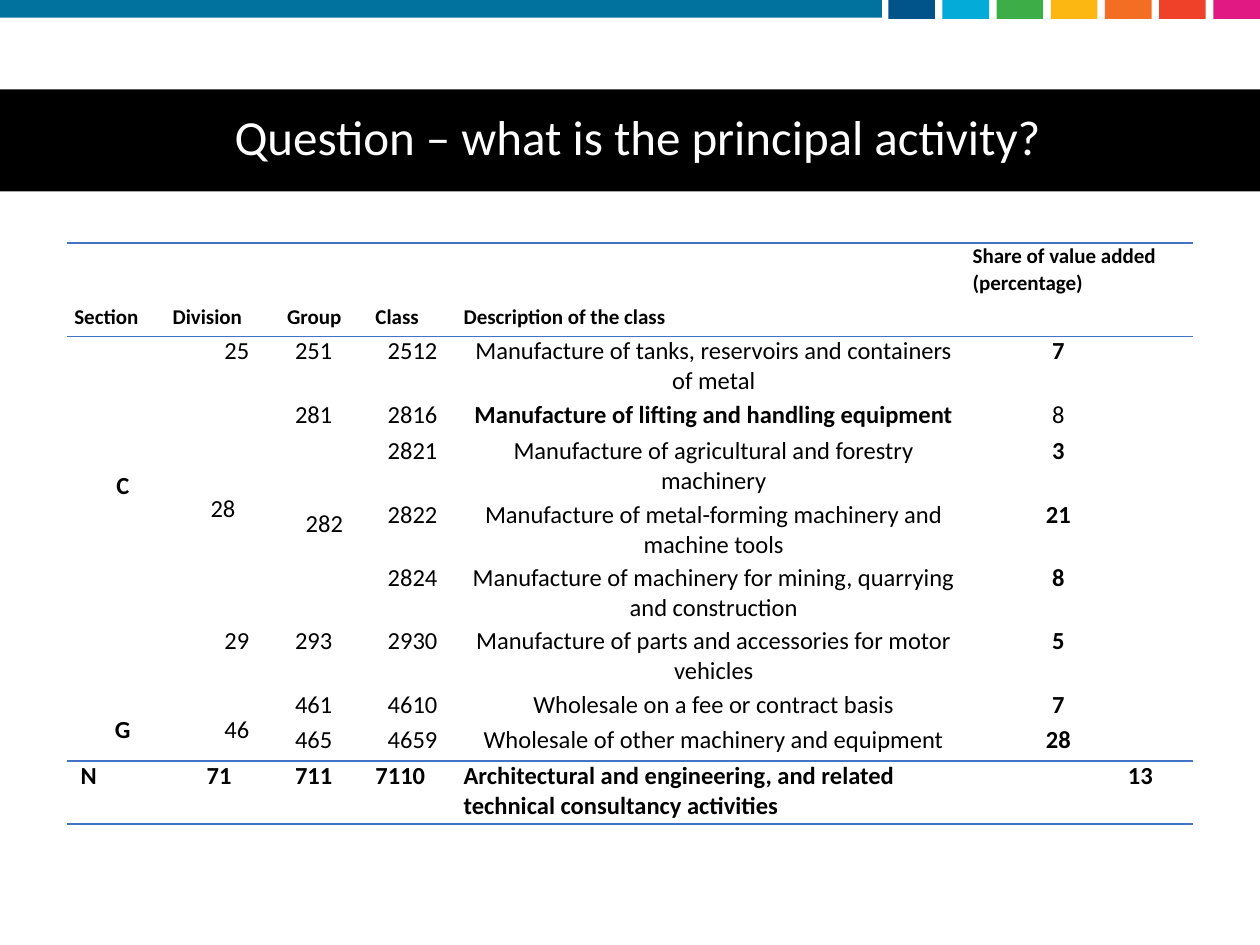
import pptx
import pptx.util
import pptx.dml.color
import pptx.enum.shapes
import pptx.enum.text
import pptx.oxml
import pptx.oxml.ns
from pptx.util import Inches

COLORS = {
    "banner": "01719D", "black": "000000", "white": "FFFFFF", "rule": "4472C4",
    "navy": "005489", "sky": "03ACD8", "green": "3DAD48", "yellow": "FDB713",
    "orange": "F36D22", "red": "EF412A", "pink": "E01983",
}
STRIPES = ["navy", "sky", "green", "yellow", "orange", "red", "pink"]
FONT = "Calibri"
NO_GRID_STYLE = "{2D5ABB26-0587-4C30-8999-92F81FD0307C}"
LEFT = pptx.enum.text.PP_ALIGN.LEFT
CENTER = pptx.enum.text.PP_ALIGN.CENTER
RIGHT = pptx.enum.text.PP_ALIGN.RIGHT

COLUMN_WIDTHS = [0.78, 0.33, 0.48, 0.8, 0.65, 4.08, 1.82]
ROW_HEIGHTS = [0.74, 0.51, 0.28, 0.51, 0.5, 0.5, 0.51, 0.28, 0.28, 0.5]
MERGES = [(0, 1, 0, 2), (1, 0, 6, 0), (2, 1, 5, 2), (3, 3, 5, 3),
          (7, 0, 8, 0), (7, 1, 8, 1), (7, 2, 8, 2), (9, 0, 9, 1)]

HEADINGS = {
    0: ("Section", LEFT, 0.06, 0),
    1: ("Division", LEFT, 0.06, 0),
    3: ("Group", CENTER, 0.03, 0.08),
    4: ("Class", LEFT, 0.06, 0),
    5: ("Description of the class", LEFT, 0.11, 0),
}
SECTIONS = {1: ("C", 1.07), 7: ("G", 0.2)}
DIVISIONS = {1: "25", 6: "29"}
CLASSES = [
    ("251", "2512", "Manufacture of tanks, reservoirs and containers of metal", "7"),
    ("281", "2816", "Manufacture of lifting and handling equipment", "8"),
    (None, "2821", "Manufacture of agricultural and forestry machinery", "3"),
    (None, "2822", "Manufacture of metal-forming machinery and machine tools", "21"),
    (None, "2824", "Manufacture of machinery for mining, quarrying and construction", "8"),
    ("293", "2930", "Manufacture of parts and accessories for motor vehicles", "5"),
    ("461", "4610", "Wholesale on a fee or contract basis", "7"),
    ("465", "4659", "Wholesale of other machinery and equipment", "28"),
]
HIGHLIGHTED_CLASS = "2816"
LAST_ROW = {
    0: ("N", LEFT, 0.11, 0),
    2: ("71", LEFT, 0, 0),
    3: ("711", CENTER, 0.09, 0.15),
    4: ("7110", LEFT, 0.06, 0),
    5: ("Architectural and engineering, and related technical consultancy activities",
        LEFT, 0.11, 0),
    6: ("13", RIGHT, 0, 0.32),
}


def rgb(name):
    return pptx.dml.color.RGBColor.from_string(COLORS[name])


def add_bar(slide, left, top, width, height, color):
    bar = slide.shapes.add_shape(
        pptx.enum.shapes.MSO_SHAPE.RECTANGLE,
        Inches(left), Inches(top), Inches(width), Inches(height))
    bar.shadow.inherit = False
    bar.fill.solid()
    bar.fill.fore_color.rgb = rgb(color)
    bar.line.fill.background()


def format_text(paragraph, size, color, align, bold=False):
    paragraph.alignment = align
    for run in paragraph.runs:
        run.font.name = FONT
        run.font.size = pptx.util.Pt(size)
        run.font.bold = bold
        run.font.color.rgb = rgb(color)


def add_title(slide, text):
    title = slide.shapes.add_textbox(Inches(0.46), Inches(0.7), Inches(9.2), Inches(0.81))
    frame = title.text_frame
    frame.word_wrap = True
    frame.vertical_anchor = pptx.enum.text.MSO_ANCHOR.MIDDLE
    frame.text = text
    frame.paragraphs[0].line_spacing = 0.9
    format_text(frame.paragraphs[0], 28, "white", CENTER)


def write_cell(cell, text, align=CENTER, left=0, right=0, top=0, size=14, bold=False):
    cell.margin_left = Inches(left)
    cell.margin_right = Inches(right)
    cell.margin_top = Inches(top)
    cell.text_frame.text = text
    format_text(cell.text_frame.paragraphs[0], size, "black", align, bold)


def rule_cell(cell):
    properties = cell._tc.get_or_add_tcPr()
    for position, side in enumerate(("lnT", "lnB")):
        properties.insert(position, pptx.oxml.parse_xml(
            f'<a:{side} {pptx.oxml.ns.nsdecls("a")} w="12700"><a:solidFill>'
            f'<a:srgbClr val="{COLORS["rule"]}"/></a:solidFill></a:{side}>'))


def add_grid(slide):
    frame = slide.shapes.add_table(
        len(ROW_HEIGHTS), len(COLUMN_WIDTHS), Inches(0.53), Inches(1.93),
        Inches(sum(COLUMN_WIDTHS)), Inches(sum(ROW_HEIGHTS)))
    table = frame.table
    table.first_row = False
    table.horz_banding = False
    table._tbl.tblPr.find(pptx.oxml.ns.qn("a:tableStyleId")).text = NO_GRID_STYLE
    for column, width in zip(table.columns, COLUMN_WIDTHS):
        column.width = Inches(width)
    last = len(ROW_HEIGHTS) - 1
    for index, (row, height) in enumerate(zip(table.rows, ROW_HEIGHTS)):
        row.height = Inches(height)
        for cell in row.cells:
            cell.margin_left = cell.margin_right = 0
            cell.margin_top = cell.margin_bottom = 0
            if index in (0, last):
                cell.fill.background()
                rule_cell(cell)
            else:
                cell.fill.solid()
                cell.fill.fore_color.rgb = rgb("white")
    for top, left, bottom, right in MERGES:
        table.cell(top, left).merge(table.cell(bottom, right))
    return table


def fill_headings(table):
    for column, (text, align, left, right) in HEADINGS.items():
        cell = table.cell(0, column)
        write_cell(cell, text, align, left, right, size=12, bold=True)
        cell.margin_bottom = Inches(0.05)
        cell.vertical_anchor = pptx.enum.text.MSO_ANCHOR.BOTTOM
    share = table.cell(0, 6)
    write_cell(share, "Share of value added (percentage)", LEFT, 0.07, size=12, bold=True)
    share.text_frame.paragraphs[0].line_spacing = 1.03


def fill_classes(table):
    for row, (letter, top) in SECTIONS.items():
        write_cell(table.cell(row, 0), letter, left=0.11, top=top, bold=True)
    for row, division in DIVISIONS.items():
        write_cell(table.cell(row, 2), division)
    write_cell(table.cell(2, 1), "28", left=0.11, top=0.74)
    write_cell(table.cell(3, 3), "282", left=0.11, top=0.58)
    write_cell(table.cell(7, 2), "46", top=0.2)
    for row, (group, code, description, share) in enumerate(CLASSES, start=1):
        highlighted = code == HIGHLIGHTED_CLASS
        if group:
            write_cell(table.cell(row, 3), group, left=0.09, right=0.15)
        write_cell(table.cell(row, 4), code, left=0.06)
        write_cell(table.cell(row, 5), description, left=0.11, bold=highlighted)
        write_cell(table.cell(row, 6), share, right=0.32, bold=not highlighted)


def fill_last_row(table):
    for column, (text, align, left, right) in LAST_ROW.items():
        write_cell(table.cell(9, column), text, align, left, right, bold=True)


def main():
    deck = pptx.Presentation()
    deck.slide_width = Inches(10)
    deck.slide_height = Inches(7.5)
    slide = deck.slides.add_slide(deck.slide_layouts[6])
    add_bar(slide, 0, 0, 7, 0.14, "banner")
    for steps, color in enumerate(reversed(STRIPES)):
        add_bar(slide, 9.63 - 0.43 * steps, 0, 0.37, 0.15, color)
    add_bar(slide, 0, 0.71, 10, 0.81, "black")
    add_title(slide, "Question – what is the principal activity?")
    table = add_grid(slide)
    fill_headings(table)
    fill_classes(table)
    fill_last_row(table)
    deck.save("out.pptx")


if __name__ == "__main__":
    main()
